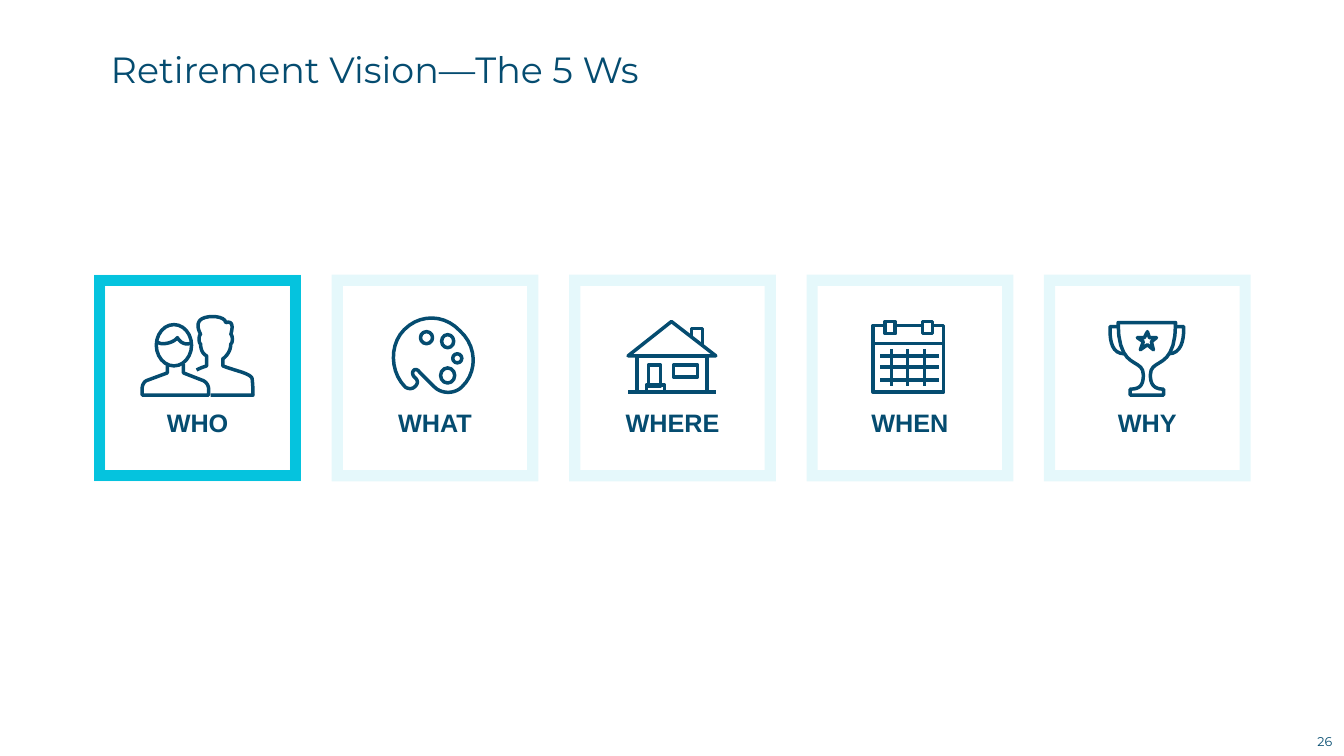
import pptx
import pptx.util
import pptx.dml.color
import pptx.enum.shapes
import pptx.enum.text
import pptx.oxml
import pptx.oxml.ns

Inches = pptx.util.Inches
Pt = pptx.util.Pt
KIND = pptx.enum.shapes.MSO_SHAPE
ALIGN = pptx.enum.text.PP_ALIGN
ANCHOR = pptx.enum.text.MSO_ANCHOR

COLORS = {"navy": "054C70", "cyan": "05C3DE"}
LEFT, RIGHT, TOP, SIDE = 0.99, 10.41, 2.78, 1.94
STEP = (RIGHT - LEFT) / 4
CURVE_STEPS = 10


def color(name):
    return pptx.dml.color.RGBColor.from_string(COLORS[name])


def add_tag(parent, tag, **attrs):
    node = pptx.oxml.parse_xml(f"<a:{tag} {pptx.oxml.ns.nsdecls('a')}/>")
    for key, value in attrs.items():
        node.set(key, value)
    parent.append(node)


def stroke(item, name="navy", width=2.5):
    item.line.color.rgb = color(name)
    item.line.width = Pt(width)


def outline(item, name="navy", width=2.5):
    item.shadow.inherit = False
    item.fill.background()
    stroke(item, name, width)
    return item


def shape(shapes, kind, *box):
    return outline(shapes.add_shape(kind, *map(Inches, box)))


def line(shapes, *ends):
    item = shapes.add_connector(
        pptx.enum.shapes.MSO_CONNECTOR.STRAIGHT, *map(Inches, ends))
    stroke(item)
    add_tag(item._element.spPr, "effectLst")


def bend(start, curve):
    """Return points along a cubic curve given as two controls and an end."""
    knots = [start, curve[:2], curve[2:4], curve[4:]]
    points = []
    for step in range(1, CURVE_STEPS + 1):
        t = step / CURVE_STEPS
        parts = ((1 - t) ** 3, 3 * t * (1 - t) ** 2, 3 * t * t * (1 - t), t ** 3)
        points.append(tuple(sum(p * k[axis] for p, k in zip(parts, knots))
                            for axis in (0, 1)))
    return points


def draw(shapes, *path, close=False):
    """Outline a path whose steps are points (2 numbers) or curves (6 numbers)."""
    points = [path[0]]
    for step in path[1:]:
        points += [step] if len(step) == 2 else bend(points[-1], step)
    spots = [(Inches(x), Inches(y)) for x, y in points]
    pen = shapes.build_freeform(*spots[0])
    pen.add_line_segments(spots[1:], close=close)
    outline(pen.convert_to_shape())


def label(shapes, text, box, size, font, bold=None, align=None, anchor=None, inset=True):
    item = shapes.add_textbox(*map(Inches, box))
    frame = item.text_frame
    frame.word_wrap = True
    frame.vertical_anchor = anchor
    if not inset:
        frame.margin_left = frame.margin_right = 0
        frame.margin_top = frame.margin_bottom = 0
    para = frame.paragraphs[0]
    para.text = text
    para.alignment = align
    para.font.size = Pt(size)
    para.font.name = font
    para.font.bold = bold
    para.font.color.rgb = color("navy")


def border(shapes, left, faint=True):
    item = shape(shapes, KIND.RECTANGLE, left, TOP, SIDE, SIDE)
    outline(item, "cyan", 8)
    ln = item.line._get_or_add_ln()
    if faint:
        add_tag(ln.find(".//" + pptx.oxml.ns.qn("a:srgbClr")), "alpha", val="10000")
    add_tag(ln, "miter", lim="800000")


def people(shapes):
    draw(shapes, (1.66, 3.62), (1.66, 3.7), (1.47, 3.77),
         (1.43, 3.78, 1.41, 3.82, 1.41, 3.86), (1.41, 3.92), (2.07, 3.92),
         (2.07, 3.86), (2.07, 3.82, 2.04, 3.78, 2, 3.77), (1.82, 3.7), (1.82, 3.61))
    shape(shapes, KIND.OVAL, 1.55, 3.22, 0.35, 0.41)
    draw(shapes, (1.9, 3.41), (1.89, 3.41, 1.89, 3.41, 1.88, 3.41),
         (1.83, 3.42, 1.79, 3.4, 1.76, 3.35), (1.74, 3.38, 1.68, 3.41, 1.62, 3.41),
         (1.6, 3.41, 1.58, 3.41, 1.56, 3.39))
    draw(shapes, (1.95, 3.67), (1.99, 3.65, 2.02, 3.64, 2.05, 3.63), (2.05, 3.53),
         (2.05, 3.53, 1.99, 3.51, 1.99, 3.41), (1.97, 3.41, 1.97, 3.32, 1.99, 3.32),
         (1.99, 3.31, 1.95, 3.25, 1.97, 3.2), (1.99, 3.12, 2.23, 3.12, 2.24, 3.2),
         (2.34, 3.17, 2.29, 3.31, 2.29, 3.32), (2.31, 3.32, 2.31, 3.41, 2.29, 3.41),
         (2.29, 3.51, 2.21, 3.56, 2.21, 3.56), (2.21, 3.63),
         (2.34, 3.68, 2.47, 3.7, 2.5, 3.75), (2.51, 3.81, 2.51, 3.92, 2.51, 3.92),
         (2.09, 3.92))


def palette(shapes):
    draw(shapes, (4.02, 3.84), (3.87, 3.69, 3.86, 3.42, 4.01, 3.27),
         (4.17, 3.11, 4.41, 3.12, 4.56, 3.28), (4.73, 3.43, 4.74, 3.69, 4.58, 3.84),
         (4.51, 3.91, 4.38, 3.91, 4.31, 3.84), (4.16, 3.69),
         (4.14, 3.66, 4.11, 3.66, 4.1, 3.68), (4.09, 3.69, 4.09, 3.72, 4.11, 3.74),
         (4.15, 3.77, 4.15, 3.81, 4.11, 3.84), (4.09, 3.86, 4.05, 3.86, 4.02, 3.84),
         close=True)
    for x, y, wide, high in ((4.38, 3.32, 0.12, 0.13), (4.49, 3.51, 0.09, 0.09),
                             (4.37, 3.65, 0.14, 0.15), (4.17, 3.29, 0.12, 0.12)):
        shape(shapes, KIND.OVAL, x, y, wide, high)


def house(shapes):
    line(shapes, 6.23, 3.89, 7.1, 3.89)
    draw(shapes, (6.66, 3.19), (6.23, 3.53), (7.1, 3.53), close=True)
    draw(shapes, (6.97, 3.44), (6.97, 3.26), (6.86, 3.26), (6.86, 3.34))
    wall, door = (6.32, 3.53, 0.69, 0.36), (6.43, 3.62, 0.12, 0.21)
    pane, stoop = (6.68, 3.62, 0.24, 0.12), (6.41, 3.82, 0.18, 0.07)
    for box in (wall, door, pane, stoop):
        shape(shapes, KIND.RECTANGLE, *box)


def calendar(shapes):
    draw(shapes, (8.78, 3.23), (8.66, 3.23), (8.66, 3.89), (9.36, 3.89),
         (9.36, 3.23), (9.25, 3.23))
    for x in (8.78, 9.15):
        shape(shapes, KIND.RECTANGLE, x, 3.19, 0.1, 0.12)
    line(shapes, 8.88, 3.23, 9.15, 3.23)
    line(shapes, 8.66, 3.41, 9.36, 3.41)
    for x in (8.84, 9, 9.17):
        line(shapes, x, 3.46, x, 3.83)
    for y in (3.53, 3.64, 3.77):
        line(shapes, 8.73, y, 9.31, y)


def trophy(shapes):
    draw(shapes, (11.38, 3.29), (11.4, 3.35), (11.47, 3.35), (11.42, 3.39),
         (11.44, 3.47), (11.38, 3.42), (11.31, 3.47), (11.34, 3.39), (11.28, 3.35),
         (11.35, 3.35), close=True)
    draw(shapes, (11.15, 3.51), (11, 3.51, 11.01, 3.31, 11.01, 3.24), (11.1, 3.24))
    draw(shapes, (11.59, 3.51), (11.75, 3.51, 11.74, 3.29, 11.74, 3.24), (11.66, 3.24))
    draw(shapes, (11.66, 3.2), (11.09, 3.2), (11.09, 3.69, 11.34, 3.54, 11.34, 3.72),
         (11.34, 3.83, 11.3, 3.86, 11.21, 3.86), (11.21, 3.92), (11.54, 3.92),
         (11.54, 3.86), (11.46, 3.86, 11.41, 3.83, 11.41, 3.72),
         (11.41, 3.54, 11.66, 3.69, 11.66, 3.2), close=True)


def card(slide, left, text, icon):
    shapes = slide.shapes.add_group_shape().shapes
    border(shapes, left)
    label(shapes, text, (left, 3.99, SIDE, 0.4), 18, "Arial", bold=True,
          align=ALIGN.CENTER)
    icon(shapes)


def main():
    deck = pptx.Presentation()
    deck.slide_width, deck.slide_height = Inches(13.33), Inches(7.5)
    slide = deck.slides.add_slide(deck.slide_layouts[6])
    label(slide.shapes, "26", (12.97, 7.23, 0.34, 0.25), 9, "Montserrat",
          align=ALIGN.CENTER, anchor=ANCHOR.MIDDLE, inset=False)
    label(slide.shapes, "Retirement Vision—The 5 Ws", (1, 0.28, 11.5, 0.81), 26,
          "Montserrat", anchor=ANCHOR.MIDDLE)
    cards = (("WHO", people), ("WHAT", palette), ("WHERE", house),
             ("WHEN", calendar), ("WHY", trophy))
    for place, (text, icon) in enumerate(cards):
        card(slide, LEFT + place * STEP, text, icon)
    border(slide.shapes, LEFT, faint=False)
    deck.save("out.pptx")


if __name__ == "__main__":
    main()
